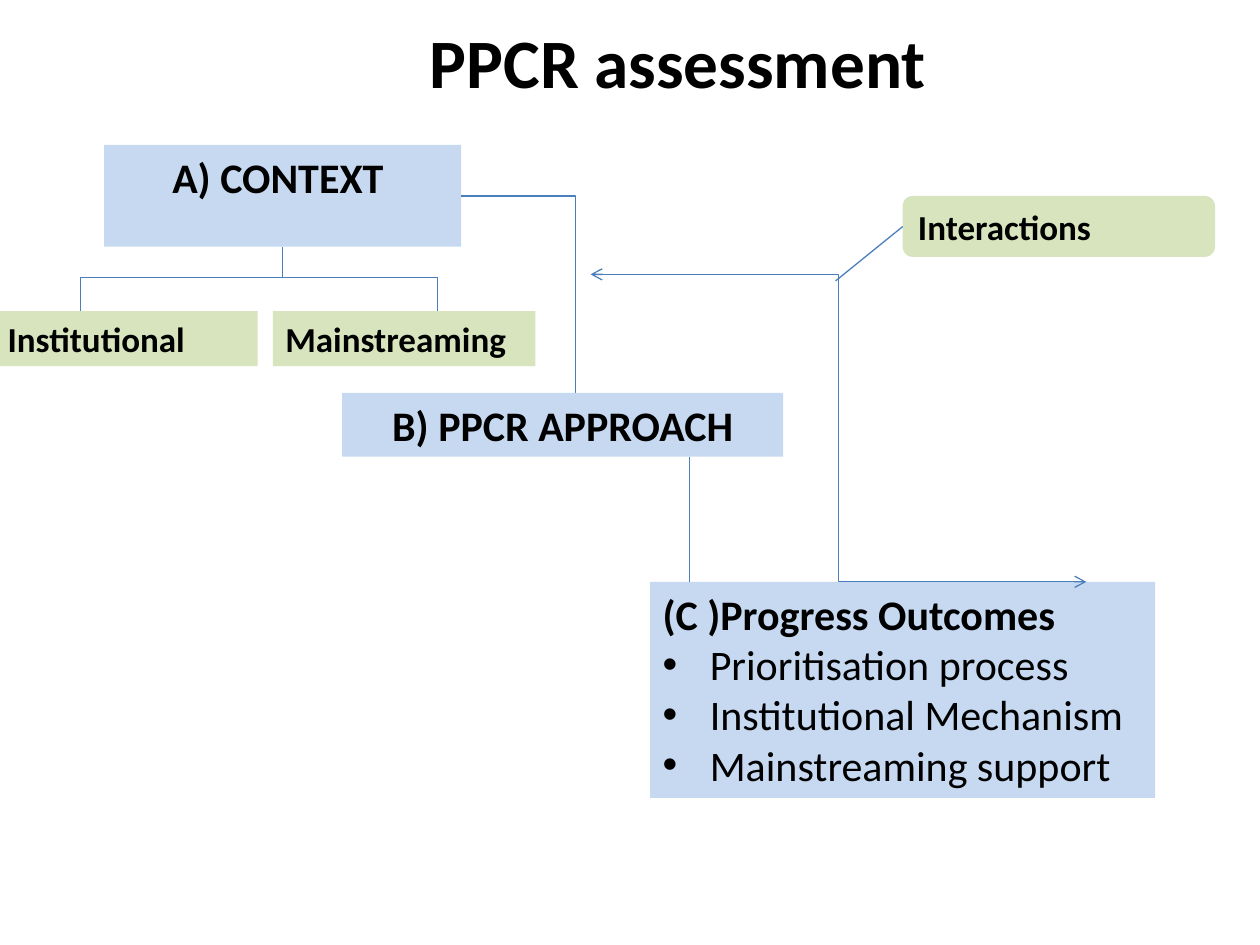
from pptx import Presentation
from pptx.dml.color import RGBColor
from pptx.enum.shapes import MSO_CONNECTOR, MSO_SHAPE
from pptx.enum.text import MSO_ANCHOR, PP_ALIGN
from pptx.oxml.ns import qn
from pptx.util import Pt
from lxml import etree

RECT, ROUNDED = MSO_SHAPE.RECTANGLE, MSO_SHAPE.ROUNDED_RECTANGLE
STRAIGHT, ELBOW = MSO_CONNECTOR.STRAIGHT, MSO_CONNECTOR.ELBOW
TOP, MIDDLE = MSO_ANCHOR.TOP, MSO_ANCHOR.MIDDLE
LEFT, CENTER = PP_ALIGN.LEFT, PP_ALIGN.CENTER
COLORS = {"text": "000000", "stage": "C6D9F1", "detail": "D7E4BD", "line": "4B7EBC"}
FONT = "Calibri"
INDENT = 27


class Diagram:
    def __init__(self, page):
        self.page = page

    def color(self, name):
        return RGBColor.from_string(COLORS[name])

    def style(self, para, size, bold=True, align=LEFT):
        para.alignment = align
        font = para.font
        font.name, font.size, font.bold = FONT, Pt(size), bold
        font.color.rgb = self.color("text")

    def title(self, text, left, top, width, height):
        box = self.page.shapes.title
        box.left, box.top, box.width, box.height = map(Pt, (left, top, width, height))
        frame = box.text_frame
        frame.text = text
        frame.vertical_anchor = MIDDLE
        self.style(frame.paragraphs[0], 39.6, align=CENTER)

    def box(self, text, left, top, width, height, fill, size, align=LEFT, kind=RECT):
        box = self.page.shapes.add_shape(kind, *map(Pt, (left, top, width, height)))
        box.shadow.inherit = False
        box.fill.solid()
        box.fill.fore_color.rgb = self.color(fill)
        box.line.fill.background()
        frame = box.text_frame
        frame.word_wrap = True
        frame.vertical_anchor = TOP
        frame.text = text
        self.style(frame.paragraphs[0], size, align=align)
        return frame

    def bullets(self, frame, items, size):
        for item in items:
            para = frame.add_paragraph()
            para.text = item
            props = para._p.get_or_add_pPr()
            props.set("marL", str(Pt(INDENT)))
            props.set("indent", str(-Pt(INDENT)))
            etree.SubElement(props, qn("a:buFont"), typeface="Arial")
            etree.SubElement(props, qn("a:buChar"), char="•")
            self.style(para, size, bold=False)

    def line(self, x1, y1, x2, y2, kind=STRAIGHT, arrows=()):
        line = self.page.shapes.add_connector(kind, *map(Pt, (x1, y1, x2, y2)))
        line.line.color.rgb = self.color("line")
        line.line.width = Pt(0.75)
        outline = line.line._get_or_add_ln()
        for end in arrows:
            etree.SubElement(outline, qn(f"a:{end}"), type="arrow")
        etree.SubElement(line._element.spPr, qn("a:effectLst"))


def main():
    deck = Presentation()
    deck.slide_width, deck.slide_height = Pt(720), Pt(540)
    diagram = Diagram(deck.slides.add_slide(deck.slide_layouts[5]))

    diagram.title("PPCR assessment", 63.4, 10, 648, 49.7)
    diagram.box("A) CONTEXT ", 59.5, 82.8, 204, 58.2, "stage", 24, CENTER)
    branch_top, detail_top = 158.4, 177.8
    for text, left in (("Institutional", -2.7), ("Mainstreaming", 156)):
        diagram.box(text, left, detail_top, 150, 31.5, "detail", 20)

    diagram.line(46, branch_top, 250, branch_top)
    for x in (46, 250):
        diagram.line(x, branch_top, x, detail_top)
    diagram.line(161.5, 141, 161.5, branch_top)
    diagram.line(263.5, 112, 394, 242, ELBOW)

    diagram.box("B) PPCR APPROACH", 195.6, 224.6, 252, 36.4, "stage", 24, CENTER)
    outcomes = diagram.box("(C )Progress Outcomes", 371.5, 332.5, 288.6, 123.5, "stage", 24)
    diagram.bullets(
        outcomes,
        ("Prioritisation process", "Institutional Mechanism", "Mainstreaming support"),
        24,
    )

    diagram.line(337.5, 156.8, 620.8, 332.5, ELBOW, ("headEnd", "tailEnd"))
    diagram.box("Interactions", 515.8, 112, 178.5, 34.8, "detail", 20, kind=ROUNDED)
    diagram.line(515.8, 129.5, 477.5, 160.5)
    diagram.line(394, 261, 394, 332.5)

    deck.save("out.pptx")


if __name__ == "__main__":
    main()
